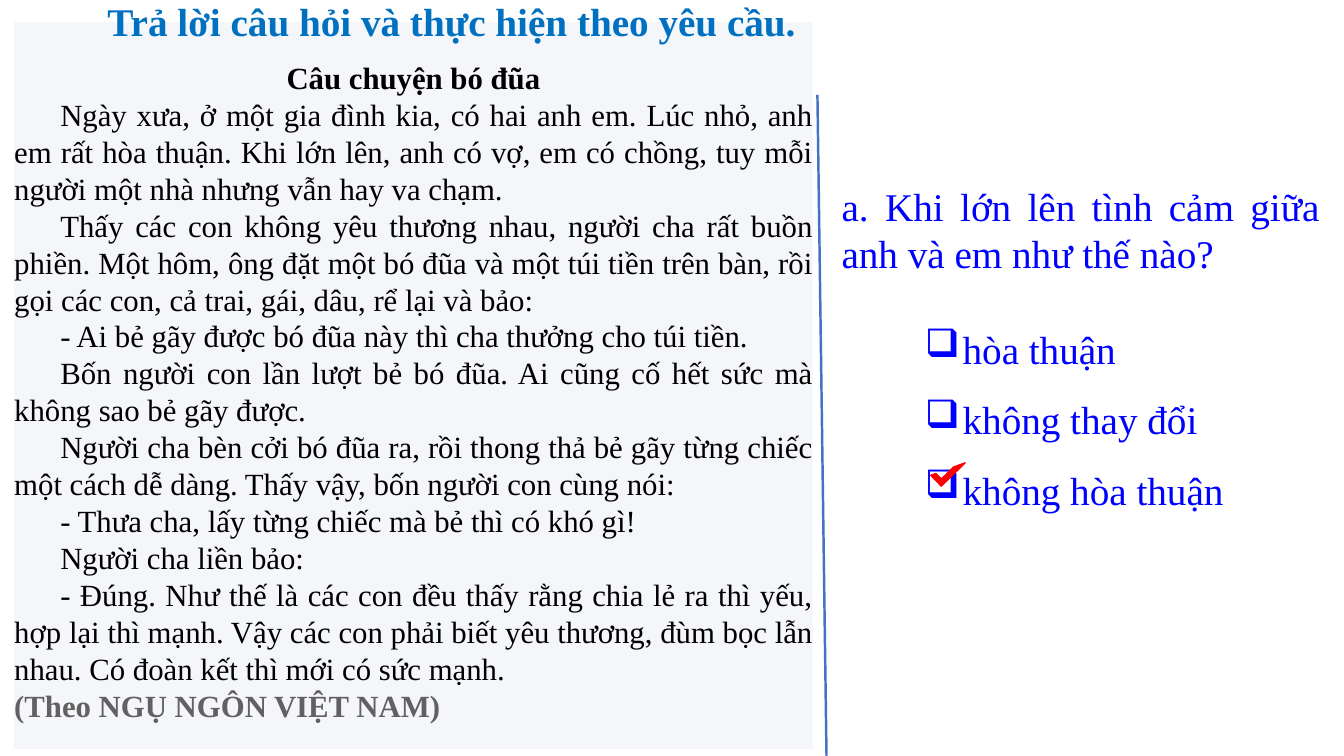
from dataclasses import dataclass

from lxml.etree import SubElement
from pptx import Presentation
from pptx.dml.color import RGBColor
from pptx.enum.shapes import MSO_CONNECTOR as Connector, MSO_SHAPE as Shape
from pptx.enum.text import MSO_ANCHOR as Anchor, MSO_AUTO_SIZE as AutoSize, PP_ALIGN as Align
from pptx.oxml.ns import qn
from pptx.util import Cm, Pt

FONT = "Times New Roman"
COLORS = {
    "panel": "F5F6FA",
    "story": "000000",
    "source": "616161",
    "title": "0070C0",
    "question": "0000FF",
    "divider": "4472C4",
    "tick": "FF0000",
}
STORY = [
    "Ngày xưa, ở một gia đình kia, có hai anh em. Lúc nhỏ, anh em rất hòa thuận. Khi lớn lên, anh có vợ, em có chồng, tuy mỗi người một nhà nhưng vẫn hay va chạm.",
    "Thấy các con không yêu thương nhau, người cha rất buồn phiền. Một hôm, ông đặt một bó đũa và một túi tiền trên bàn, rồi gọi các con, cả trai, gái, dâu, rể lại và bảo:",
    "- Ai bẻ gãy được bó đũa này thì cha thưởng cho túi tiền.",
    "Bốn người con lần lượt bẻ bó đũa. Ai cũng cố hết sức mà không sao bẻ gãy được.",
    "Người cha bèn cởi bó đũa ra, rồi thong thả bẻ gãy từng chiếc một cách dễ dàng. Thấy vậy, bốn người con cùng nói:",
    "- Thưa cha, lấy từng chiếc mà bẻ thì có khó gì!",
    "Người cha liền bảo:",
    "- Đúng. Như thế là các con đều thấy rằng chia lẻ ra thì yếu, hợp lại thì mạnh. Vậy các con phải biết yêu thương, đùm bọc lẫn nhau. Có đoàn kết thì mới có sức mạnh.",
]
ANSWERS = ["hòa thuận", "không thay đổi", "không hòa thuận"]


@dataclass
class Box:
    left: float
    top: float
    width: float
    height: float

    def lengths(self) -> tuple:
        return Cm(self.left), Cm(self.top), Cm(self.width), Cm(self.height)


@dataclass
class Para:
    text: str
    color: str
    size: int = 28
    bold: bool = False
    align: Align = Align.LEFT
    spacing: float = 1.0
    after: float = 0
    margin: float = 0
    indent: float = 0
    bullet: str = ""


def rgb(name: str) -> RGBColor:
    return RGBColor.from_string(COLORS[name])


def write(sp, paras: list[Para], anchor: Anchor = Anchor.TOP,
          fit: AutoSize = AutoSize.SHAPE_TO_FIT_TEXT) -> None:
    tf = sp.text_frame
    tf.word_wrap = True
    tf.auto_size = fit
    tf.vertical_anchor = anchor
    for i, para in enumerate(paras):
        p = tf.add_paragraph() if i else tf.paragraphs[0]
        p.alignment = para.align
        p.line_spacing = para.spacing
        p.space_after = Pt(para.after)
        pPr = p._p.get_or_add_pPr()
        pPr.set("marL", str(Cm(para.margin)))
        pPr.set("indent", str(Cm(para.indent)))
        if para.bullet:
            SubElement(pPr, qn("a:buChar")).set("char", para.bullet)
        r = p.add_run()
        r.text = para.text
        r.font.name = FONT
        r.font.size = Pt(para.size)
        r.font.bold = para.bold
        r.font.color.rgb = rgb(para.color)


def add_filled(s, kind: Shape, box: Box, color: str):
    sp = s.shapes.add_shape(kind, *box.lengths())
    sp.shadow.inherit = False
    sp.fill.solid()
    sp.fill.fore_color.rgb = rgb(color)
    sp.line.fill.background()
    return sp


def add_story(s) -> None:
    sp = add_filled(s, Shape.RECTANGLE, Box(0.36, 0.56, 20.12, 18.31), "panel")
    tf = sp.text_frame
    tf.margin_left = tf.margin_right = 0
    tf.margin_top, tf.margin_bottom = Cm(0.81), Cm(0.53)
    heading = Para("Câu chuyện bó đũa", "story", 22, True, Align.CENTER)
    body = [Para(text, "story", 22, align=Align.JUSTIFY, indent=1.16) for text in STORY]
    source = Para("(Theo NGỤ NGÔN VIỆT NAM)", "source", 22, True, Align.JUSTIFY)
    write(sp, [heading, *body, source], Anchor.MIDDLE)


def add_text(s, box: Box, paras: list[Para], **options) -> None:
    write(s.shapes.add_textbox(*box.lengths()), paras, **options)


def add_divider(s) -> None:
    line = s.shapes.add_connector(Connector.STRAIGHT, Cm(20.6), Cm(2.39), Cm(20.83), Cm(19.05))
    line.line.color.rgb = rgb("divider")
    line.line.width = Pt(1.75)
    SubElement(line._element.spPr, qn("a:effectLst"))


def add_tick(s) -> None:
    sp = add_filled(s, Shape.HALF_FRAME, Box(23.7, 11.4, 0.38, 0.84), "tick")
    sp.line.color.rgb = rgb("tick")
    sp.line.width = Pt(1)
    sp.rotation = 225.7


def main() -> None:
    prs = Presentation()
    prs.slide_width, prs.slide_height = Cm(33.87), Cm(19.05)
    s = prs.slides.add_slide(prs.slide_layouts[6])
    add_story(s)
    add_text(s, Box(1.32, -0.86, 20.12, 2.9),
             [Para("Trả lời câu hỏi và thực hiện theo yêu cầu.", "title", bold=True,
                   align=Align.CENTER, spacing=0.9, after=6)],
             anchor=Anchor.MIDDLE, fit=AutoSize.NONE)
    add_text(s, Box(20.96, 4.47, 12.55, 2.64),
             [Para("a. Khi lớn lên tình cảm giữa anh và em như thế nào?", "question",
                   align=Align.JUSTIFY)])
    add_divider(s)
    add_text(s, Box(23.06, 7.47, 10.06, 5.44),
             [Para(text, "question", spacing=1.5, margin=0.95, indent=-0.95, bullet="❑")
              for text in ANSWERS])
    add_tick(s)
    prs.save("out.pptx")


if __name__ == "__main__":
    main()
